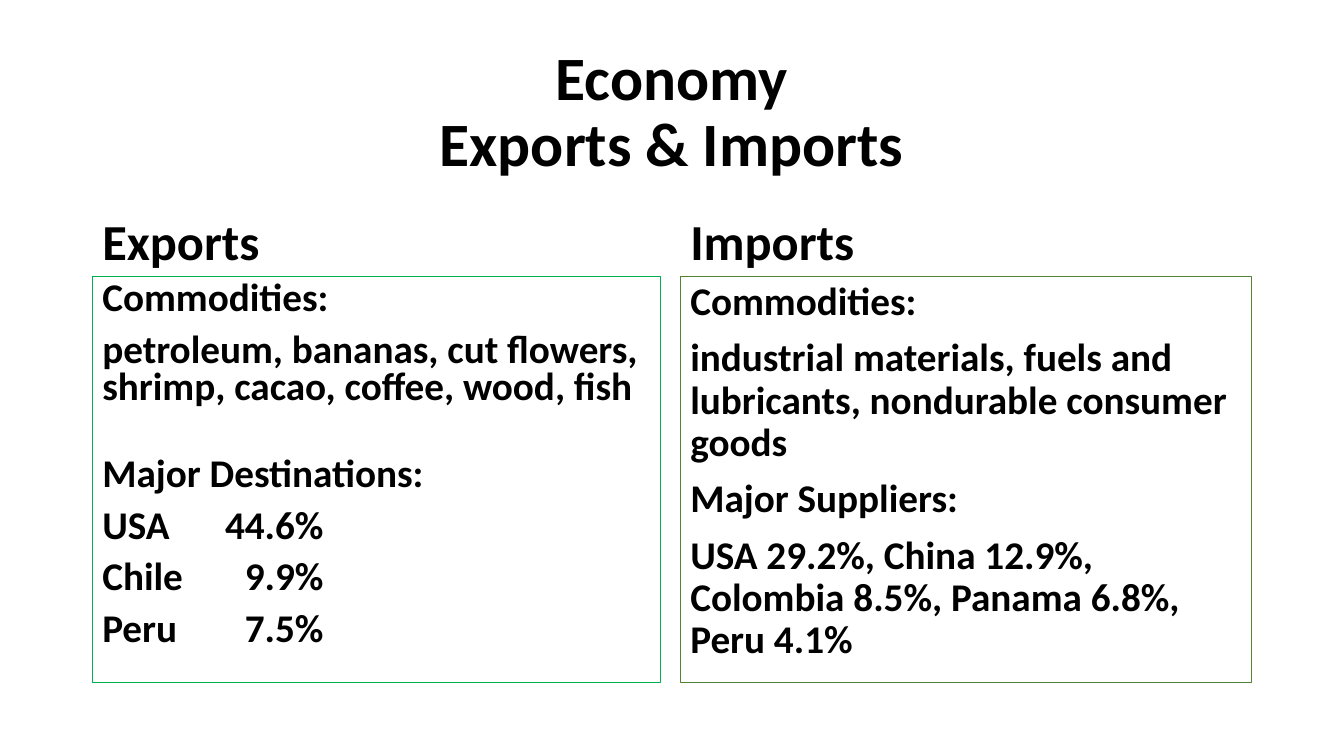
import pptx
import pptx.dml.color
import pptx.enum.shapes
import pptx.enum.text
import pptx.oxml.ns
import pptx.util
from lxml import etree

Pt = pptx.util.Pt
ALIGN = pptx.enum.text.PP_ALIGN
ANCHOR = pptx.enum.text.MSO_ANCHOR

COLORS = {"text": "000000", "exports": "00B050", "imports": "548235"}
LEFT, TITLE_TOP, HEADING_TOP, LIST_TOP = 66, 28.8, 132.5, 197.5
VALUE_TAB = 158

COLUMNS = [
    {
        "heading": "Exports", "left": LEFT, "width": 406,
        "outline": "exports", "spacing": 0.8,
        "lines": [
            ("Commodities:", 0),
            ("petroleum, bananas, cut flowers, shrimp, cacao, coffee, wood, fish", 10),
            ("Major Destinations:", 35),
            ("USA\t44.6%", 10),
            ("Chile\t9.9%", 10),
            ("Peru\t7.5%", 10),
        ],
    },
    {
        "heading": "Imports", "left": 486, "width": 408,
        "outline": "imports", "spacing": 0.9,
        "lines": [
            ("Commodities:", 0),
            ("industrial materials, fuels and lubricants, nondurable consumer goods", 10),
            ("Major Suppliers:", 10),
            ("USA 29.2%, China 12.9%, Colombia 8.5%, Panama 6.8%, Peru 4.1%", 10),
        ],
    },
]


def rgb(name):
    return pptx.dml.color.RGBColor.from_string(COLORS[name])


def apply(target, values):
    for name, value in values.items():
        setattr(target, name, value)


def add_value_tab(paragraph):
    properties = paragraph._p.get_or_add_pPr()
    tabs = etree.SubElement(properties, pptx.oxml.ns.qn("a:tabLst"))
    etree.SubElement(tabs, pptx.oxml.ns.qn("a:tab"), pos=str(Pt(VALUE_TAB)), algn="r")


def write_lines(frame, lines, size, spacing, anchor, align=ALIGN.LEFT):
    apply(frame, {
        "word_wrap": True,
        "auto_size": pptx.enum.text.MSO_AUTO_SIZE.NONE,
        "vertical_anchor": anchor,
    })
    for index, (words, gap) in enumerate(lines):
        paragraph = frame.add_paragraph() if index else frame.paragraphs[0]
        paragraph.text = words
        if "\t" in words:
            add_value_tab(paragraph)
        apply(paragraph, {
            "alignment": align,
            "line_spacing": spacing,
            "space_before": Pt(gap),
        })
        apply(paragraph.font, {"name": "Calibri", "size": Pt(size), "bold": True})
        paragraph.font.color.rgb = rgb("text")


def set_title(slide):
    title = slide.shapes.title
    apply(title, {
        "left": Pt(LEFT), "top": Pt(TITLE_TOP),
        "width": Pt(828), "height": Pt(104.4),
    })
    write_lines(title.text_frame, [("Economy\vExports & Imports", 0)],
                44, 0.9, ANCHOR.MIDDLE, ALIGN.CENTER)


def add_heading(slide, column):
    heading = slide.shapes.add_textbox(
        Pt(column["left"]), Pt(HEADING_TOP), Pt(column["width"]), Pt(65))
    write_lines(heading.text_frame, [(column["heading"], 0)], 36, 0.9, ANCHOR.BOTTOM)


def add_trade_box(slide, column):
    box = slide.shapes.add_shape(
        pptx.enum.shapes.MSO_SHAPE.RECTANGLE,
        Pt(column["left"]), Pt(LIST_TOP), Pt(column["width"]), Pt(290))
    box.shadow.inherit = False
    box.fill.background()
    box.line.color.rgb = rgb(column["outline"])
    box.line.width = Pt(0.75)
    write_lines(box.text_frame, column["lines"], 28, column["spacing"], ANCHOR.TOP)


def main():
    deck = pptx.Presentation()
    apply(deck, {"slide_width": Pt(960), "slide_height": Pt(540)})
    slide = deck.slides.add_slide(deck.slide_layouts.get_by_name("Title Only"))
    set_title(slide)
    for column in COLUMNS:
        add_heading(slide, column)
        add_trade_box(slide, column)
    deck.save("out.pptx")


if __name__ == "__main__":
    main()
